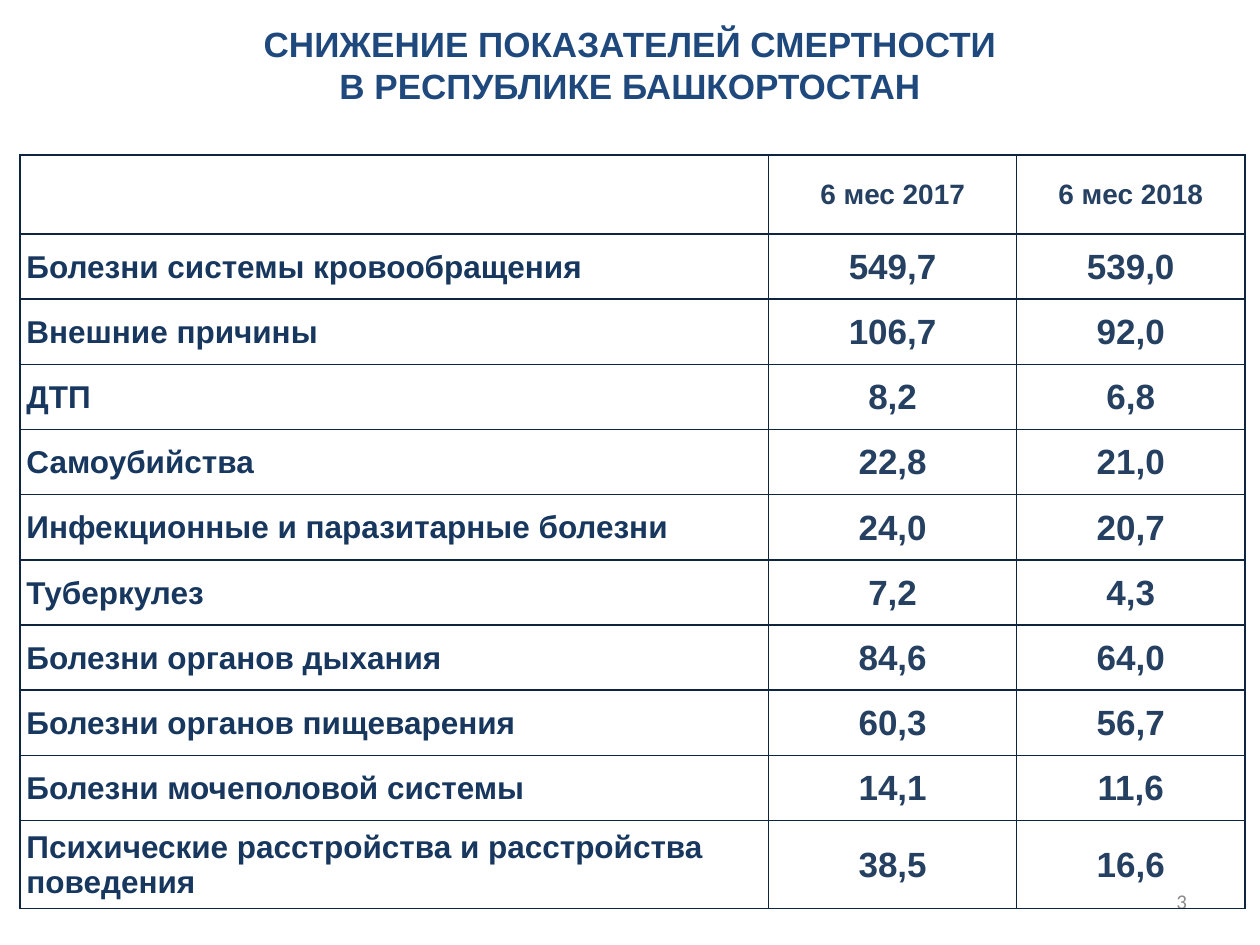
import pptx
import pptx.dml.color
import pptx.enum.text
import pptx.oxml
import pptx.oxml.ns
import pptx.util

WIDTH, HEIGHT = pptx.util.Inches(10), pptx.util.Inches(7.5)
COLORS = {"title": "1F497D", "label": "17375E", "value": "254061",
          "border": "0F243E", "number": "8C8C8C"}
ALIGN = pptx.enum.text.PP_ALIGN
MIDDLE = pptx.enum.text.MSO_ANCHOR.MIDDLE

TITLE = "СНИЖЕНИЕ ПОКАЗАТЕЛЕЙ СМЕРТНОСТИ\nВ РЕСПУБЛИКЕ БАШКОРТОСТАН"
ROWS = [
    ("", "6 мес 2017", "6 мес 2018"),
    ("Болезни системы кровообращения", "549,7", "539,0"),
    ("Внешние причины", "106,7", "92,0"),
    ("ДТП", "8,2", "6,8"),
    ("Самоубийства", "22,8", "21,0"),
    ("Инфекционные и паразитарные болезни", "24,0", "20,7"),
    ("Туберкулез", "7,2", "4,3"),
    ("Болезни органов дыхания", "84,6", "64,0"),
    ("Болезни органов пищеварения", "60,3", "56,7"),
    ("Болезни мочеполовой системы", "14,1", "11,6"),
    ("Психические расстройства и расстройства поведения", "38,5", "16,6"),
]
COLUMN_WEIGHTS = [5.94, 1.97, 1.81]
ROW_WEIGHTS = [0.63] + [0.52] * 9 + [0.7]


def box_at(left, top, width, height):
    """Turn percentages of the slide into lengths."""
    return (int(WIDTH * left / 100), int(HEIGHT * top / 100),
            int(WIDTH * width / 100), int(HEIGHT * height / 100))


def write(frame, text, size, color, align, font="Arial", bold=True):
    frame.text = text
    for para in frame.paragraphs:
        para.alignment = align
        for span in para.runs:
            span.font.size = pptx.util.Pt(size)
            span.font.name = font
            span.font.bold = bold
            span.font.color.rgb = pptx.dml.color.RGBColor.from_string(COLORS[color])


def add_text(page, box, text, size, color, align, **style):
    frame = page.shapes.add_textbox(*box).text_frame
    frame.word_wrap = True
    frame.vertical_anchor = MIDDLE
    frame.margin_left = frame.margin_right = pptx.util.Inches(0.08)
    frame.margin_top = frame.margin_bottom = pptx.util.Inches(0.04)
    write(frame, text, size, color, align, **style)


def add_borders(cell):
    properties = cell._tc.get_or_add_tcPr()
    for position, side in enumerate(("lnL", "lnR", "lnT", "lnB")):
        line = pptx.oxml.parse_xml(
            f'<a:{side} {pptx.oxml.ns.nsdecls("a")} w="{pptx.util.Pt(1)}">'
            f'<a:solidFill><a:srgbClr val="{COLORS["border"]}"/></a:solidFill>'
            f'</a:{side}>')
        properties.insert(position, line)


def fill_cell(cell, text, is_header, is_label):
    cell.fill.background()
    cell.vertical_anchor = MIDDLE
    cell.margin_left = cell.margin_right = cell.margin_top = pptx.util.Inches(0.01)
    cell.margin_bottom = 0
    if is_label:
        write(cell.text_frame, text, 18, "label", ALIGN.LEFT)
        indent = cell.text_frame.paragraphs[0]._p.get_or_add_pPr()
        indent.set("marL", str(pptx.util.Inches(0.04)))
    else:
        write(cell.text_frame, text, 16 if is_header else 20, "value", ALIGN.CENTER)
    add_borders(cell)


def add_mortality_table(page, box):
    width, height = box[2:]
    table = page.shapes.add_table(len(ROWS), len(COLUMN_WEIGHTS), *box).table
    table.first_row = table.horz_banding = False
    for column, weight in zip(table.columns, COLUMN_WEIGHTS):
        column.width = int(width * weight / sum(COLUMN_WEIGHTS))
    for row, weight in zip(table.rows, ROW_WEIGHTS):
        row.height = int(height * weight / sum(ROW_WEIGHTS))
    for r, texts in enumerate(ROWS):
        for c, text in enumerate(texts):
            fill_cell(table.cell(r, c), text, r == 0, c == 0)


def main():
    deck = pptx.Presentation()
    deck.slide_width, deck.slide_height = WIDTH, HEIGHT
    page = deck.slides.add_slide(deck.slide_layouts[6])
    add_text(page, box_at(71.7, 92.67, 23.3, 5.33), "3", 12, "number",
             ALIGN.RIGHT, font="Calibri", bold=False)
    add_text(page, box_at(0, 1.87, 100, 10), TITLE, 20, "title", ALIGN.CENTER)
    add_mortality_table(page, box_at(1.6, 16.4, 97.2, 79.73))
    deck.save("out.pptx")


if __name__ == "__main__":
    main()
